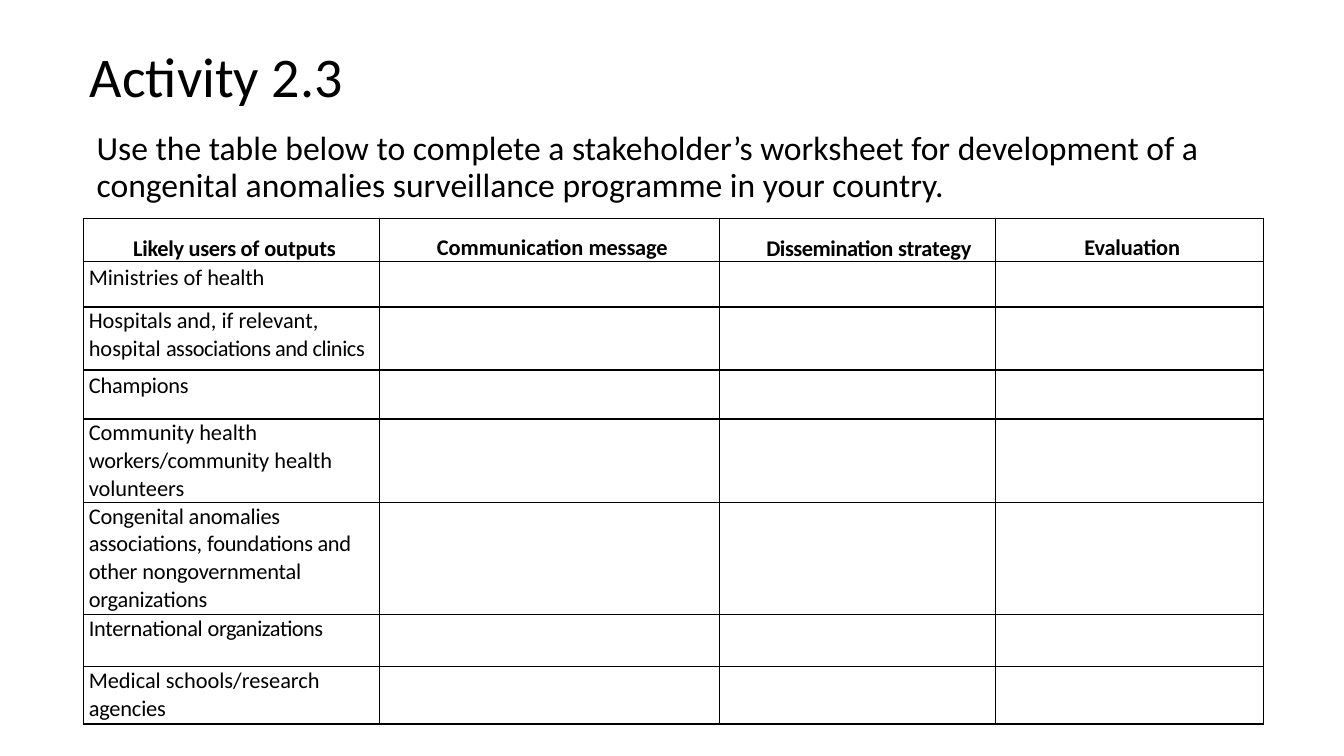
from lxml import etree
from pptx import Presentation
from pptx import util as u
from pptx.dml.color import RGBColor
from pptx.enum import text
from pptx.oxml import ns

BLACK = RGBColor(0x00, 0x00, 0x00)
WHITE = RGBColor(0xFF, 0xFF, 0xFF)
LEFT = text.PP_ALIGN.LEFT
CENTER = text.PP_ALIGN.CENTER


def write(frame, parts, size, bold=False, align=LEFT, line_spacing=0.9, left=0, first=0):
    paragraph = frame.paragraphs[0]
    paragraph.alignment = align
    paragraph.line_spacing = line_spacing
    paragraph.space_before = u.Pt(0)
    properties = paragraph._p.get_or_add_pPr()
    properties.set("marL", str(u.Pt(left)))
    properties.set("indent", str(u.Pt(first)))
    for words, tracking in parts:
        run = paragraph.add_run()
        run.text = words
        run.font.name = "Calibri"
        run.font.size = u.Pt(size)
        run.font.bold = bold
        run.font.color.rgb = BLACK
        if tracking:
            run._r.get_or_add_rPr().set("spc", str(round(tracking * 100)))


def add_borders(cell):
    properties = cell._tc.get_or_add_tcPr()
    for side in ("lnL", "lnR", "lnT", "lnB"):
        line = etree.SubElement(properties, ns.qn(f"a:{side}"), w=str(u.Pt(1)))
        fill = etree.SubElement(line, ns.qn("a:solidFill"))
        etree.SubElement(fill, ns.qn("a:srgbClr"), val=str(BLACK))


presentation = Presentation()
presentation.slide_width = u.Pt(960)
presentation.slide_height = u.Pt(540)
slide = presentation.slides.add_slide(presentation.slide_layouts[5])
slide.background.fill.solid()
slide.background.fill.fore_color.rgb = WHITE

title = slide.shapes.title
title.left, title.top, title.width, title.height = u.Pt(57), u.Pt(20), u.Pt(828), u.Pt(73.5)
title.text_frame.vertical_anchor = text.MSO_ANCHOR.MIDDLE
write(title.text_frame, [("Activity 2.3", 0)], size=40)

instruction = slide.shapes.add_textbox(u.Pt(62), u.Pt(90.7), u.Pt(849.6), u.Pt(417.6))
instruction.text_frame.word_wrap = True
write(
    instruction.text_frame,
    [("Use the table below to complete a stakeholder’s worksheet for development of a "
      "congenital anomalies surveillance programme in your country.", 0)],
    size=24,
)

headers = [
    ([("Likely users of ", -0.2), ("outputs", -0.1)], 0.97, 4.3, 0),
    ([("Communication ", 0), ("message", -0.1)], 1.07, 4, 0),
    ([("Dissemination ", -0.3), ("strategy", -0.1)], 0.97, 28.8, -12.2),
    ([("Evaluation", -0.1)], 1.07, 4, 0),
]
users = [
    ([("Ministries of ", 0), ("health", -0.1)], 1.07),
    ([("Hospitals and, if relevant, hospital ", 0), ("associations and clinics", -0.3)], 1.02),
    ([("Champions", -0.1)], 1.07),
    ([("Community health ", 0), ("workers/community ", -0.1), ("health volunteers", 0)], 1.02),
    ([("Congenital anomalies associations, ", -0.1), ("foundations and other ", -0.2),
      ("nongovernmental organizations", -0.1)], 1.02),
    ([("International ", -0.2), ("organizations", -0.3)], 1.02),
    ([("Medical schools/research ", 0), ("agencies", -0.1)], 1.02),
]
column_widths = [211.5, 242.7, 197.2, 191.6]
row_heights = [31, 32.3, 45, 35, 59.5, 80, 37.5, 41]

table_frame = slide.shapes.add_table(
    len(row_heights), len(column_widths),
    u.Pt(59.6), u.Pt(156), u.Pt(sum(column_widths)), u.Pt(sum(row_heights)),
)
table = table_frame.table
table.first_row = False
table.horz_banding = False
for column, width in zip(table.columns, column_widths):
    column.width = u.Pt(width)
for row, height in zip(table.rows, row_heights):
    row.height = u.Pt(height)

for cell in table.iter_cells():
    cell.margin_left = cell.margin_right = cell.margin_top = cell.margin_bottom = 0
    add_borders(cell)
    cell.fill.solid()
    cell.fill.fore_color.rgb = WHITE

for column, (parts, spacing, left, first) in enumerate(headers):
    cell = table.cell(0, column)
    cell.vertical_anchor = text.MSO_ANCHOR.BOTTOM
    write(cell.text_frame, parts, size=16, bold=True, align=CENTER,
          line_spacing=spacing, left=left, first=first)

for row, (parts, spacing) in enumerate(users, start=1):
    write(table.cell(row, 0).text_frame, parts, size=16, line_spacing=spacing, left=3.8)

presentation.save("out.pptx")
